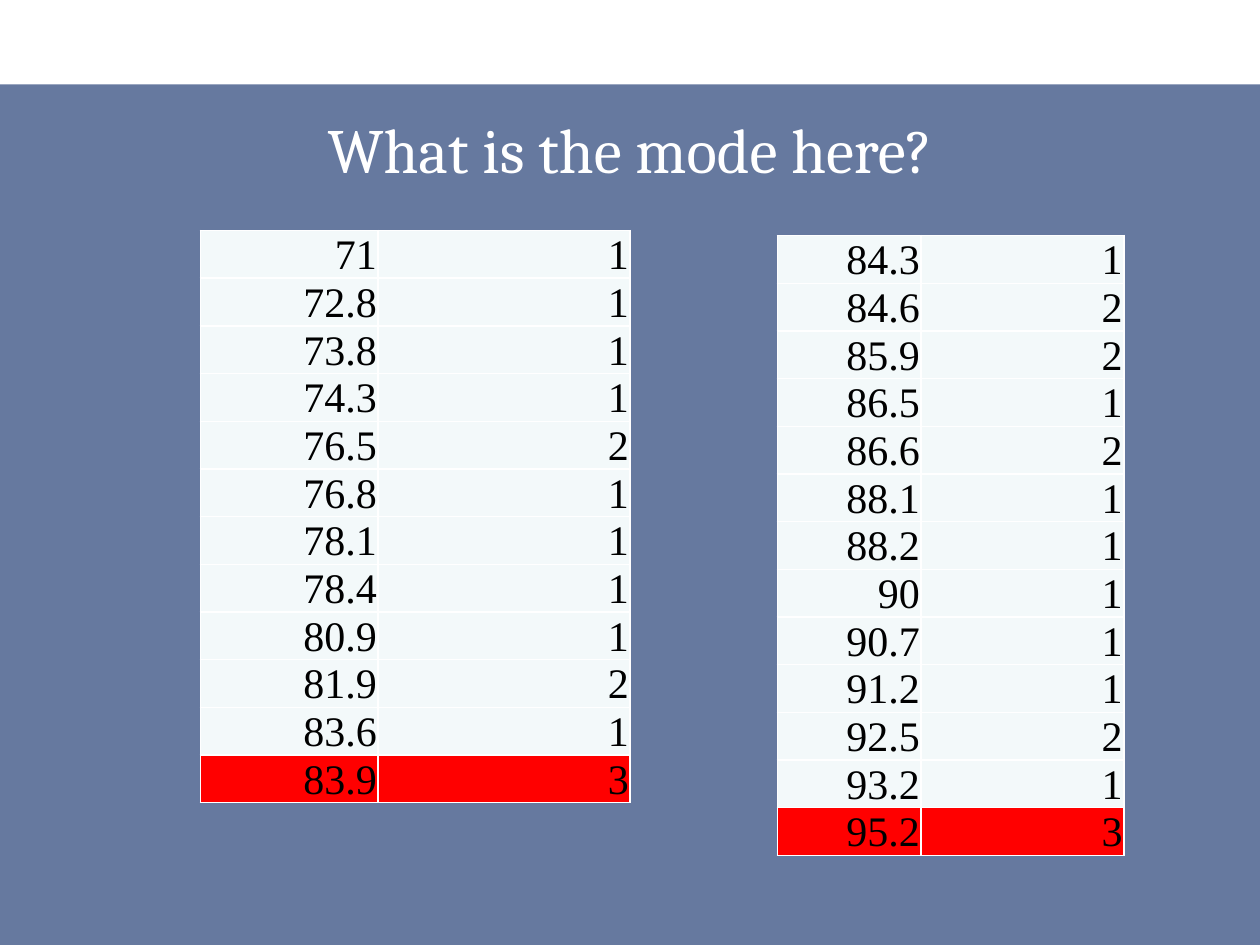
from dataclasses import dataclass

from lxml import etree
from pptx import Presentation
from pptx.dml.color import RGBColor
from pptx.enum.shapes import MSO_SHAPE
from pptx.enum.text import MSO_ANCHOR, PP_ALIGN
from pptx.oxml.ns import qn
from pptx.util import Inches, Pt

NAVY = RGBColor(0x00, 0x20, 0x60)
WHITE = RGBColor(0xFF, 0xFF, 0xFF)
BLACK = RGBColor(0x00, 0x00, 0x00)
PALE = RGBColor(0xF3, 0xF9, 0xFA)
RED = RGBColor(0xFF, 0x00, 0x00)

RECTANGLE = MSO_SHAPE.RECTANGLE
CENTER, RIGHT = PP_ALIGN.CENTER, PP_ALIGN.RIGHT
TOP, BOTTOM = MSO_ANCHOR.TOP, MSO_ANCHOR.BOTTOM

ROW_HEIGHT = 0.37
MODE_COUNT = 3


@dataclass
class FrequencyTable:
    left: float
    top: float
    column_widths: tuple[float, float]
    rows: list[tuple[str, int]]


TABLES = [
    FrequencyTable(1.59, 1.83, (1.41, 2.0), [
        ("71", 1), ("72.8", 1), ("73.8", 1), ("74.3", 1), ("76.5", 2), ("76.8", 1),
        ("78.1", 1), ("78.4", 1), ("80.9", 1), ("81.9", 2), ("83.6", 1), ("83.9", 3),
    ]),
    FrequencyTable(6.17, 1.87, (1.14, 1.61), [
        ("84.3", 1), ("84.6", 2), ("85.9", 2), ("86.5", 1), ("86.6", 2), ("88.1", 1),
        ("88.2", 1), ("90", 1), ("90.7", 1), ("91.2", 1), ("92.5", 2), ("93.2", 1),
        ("95.2", 3),
    ]),
]


def write_text(frame, text: str, *, font: str, size: float, color: RGBColor, align,
               line_spacing: float = 1.0) -> None:
    para = frame.paragraphs[0]
    para.alignment = align
    para.line_spacing = line_spacing
    span = para.add_run()
    span.text = text
    span.font.name = font
    span.font.size = Pt(size)
    span.font.bold = False
    span.font.color.rgb = color


def add_band(page) -> None:
    band = page.shapes.add_shape(RECTANGLE, 0, Inches(0.67), Inches(10), Inches(6.83))
    band.shadow.inherit = False
    band.line.fill.background()
    band.fill.solid()
    band.fill.fore_color.rgb = NAVY
    # 60% opacity
    color = band.fill._xPr.find(qn("a:solidFill"))[0]
    etree.SubElement(color, qn("a:alpha"), val="60000")


def add_title(page, text: str) -> None:
    box = page.shapes.add_textbox(Inches(0.25), Inches(0.83), Inches(9.5), Inches(0.83))
    frame = box.text_frame
    frame.word_wrap = True
    frame.vertical_anchor = TOP
    write_text(frame, text, font="Cambria", size=36, color=WHITE, align=CENTER)


def add_borders(cell, color: RGBColor, width: float) -> None:
    properties = cell._tc.get_or_add_tcPr()
    for side in ("lnL", "lnR", "lnT", "lnB"):
        line = etree.SubElement(properties, qn(f"a:{side}"), w=str(Pt(width)))
        fill = etree.SubElement(line, qn("a:solidFill"))
        etree.SubElement(fill, qn("a:srgbClr"), val=str(color))


def fill_cell(cell, text: str, fill: RGBColor) -> None:
    cell.margin_left = cell.margin_right = cell.margin_top = Inches(0.01)
    cell.margin_bottom = 0
    cell.vertical_anchor = BOTTOM
    add_borders(cell, WHITE, 1)
    cell.fill.solid()
    cell.fill.fore_color.rgb = fill
    write_text(cell.text_frame, text, font="Times New Roman", size=24,
               color=BLACK, align=RIGHT, line_spacing=0.92)


def add_frequency_table(page, data: FrequencyTable) -> None:
    table = page.shapes.add_table(
        len(data.rows), 2, Inches(data.left), Inches(data.top),
        Inches(sum(data.column_widths)), Inches(ROW_HEIGHT * len(data.rows))).table
    table.first_row = table.horz_banding = False
    for column, width in zip(table.columns, data.column_widths):
        column.width = Inches(width)
    for index, (value, count) in enumerate(data.rows):
        table.rows[index].height = Inches(ROW_HEIGHT)
        fill = RED if count == MODE_COUNT else PALE
        fill_cell(table.cell(index, 0), value, fill)
        fill_cell(table.cell(index, 1), str(count), fill)


def main() -> None:
    deck = Presentation()
    deck.slide_width, deck.slide_height = Inches(10), Inches(7.5)
    page = deck.slides.add_slide(deck.slide_layouts[6])

    # Background and title
    add_band(page)
    add_title(page, "What is the mode here?")

    # Values with their counts
    for data in TABLES:
        add_frequency_table(page, data)

    deck.save("out.pptx")


if __name__ == "__main__":
    main()
